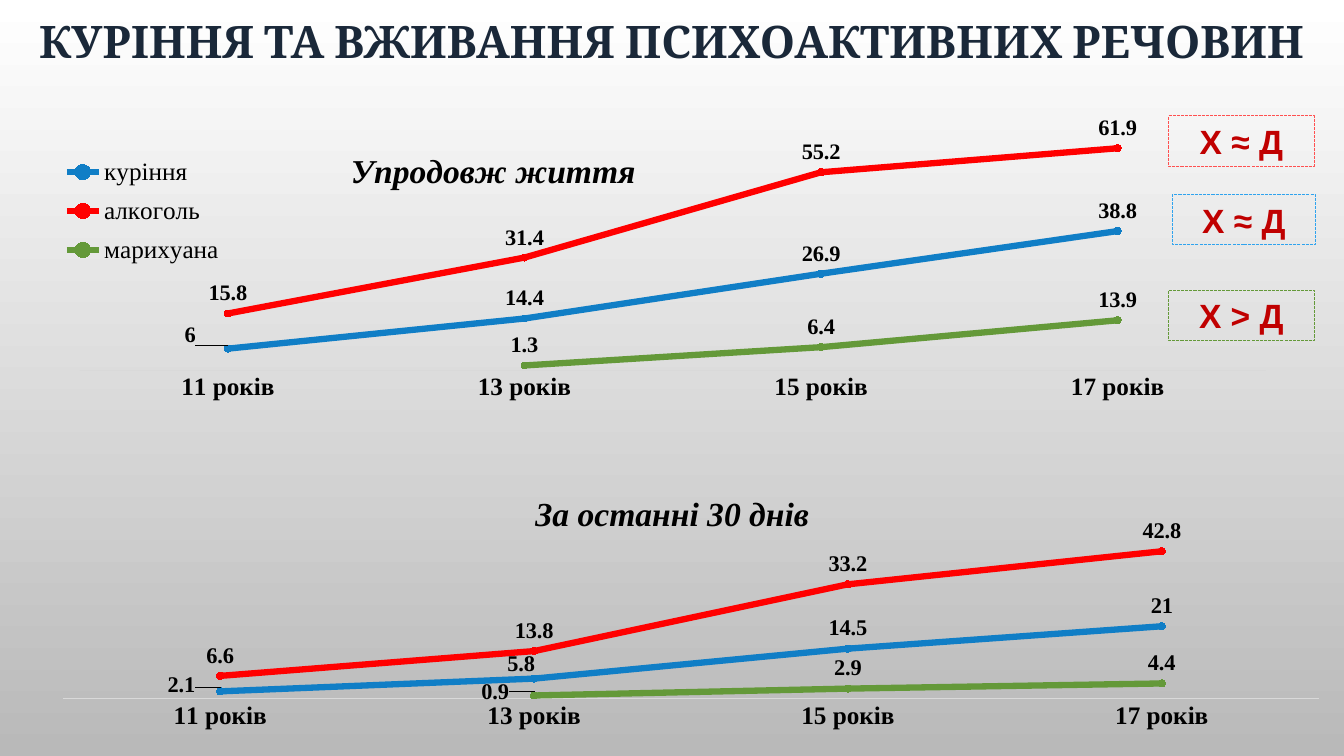
from pptx import Presentation
from pptx.chart.data import CategoryChartData
from pptx.dml.color import RGBColor
from pptx.enum.chart import (XL_CHART_TYPE, XL_LABEL_POSITION, XL_LEGEND_POSITION,
                             XL_MARKER_STYLE, XL_TICK_LABEL_POSITION, XL_TICK_MARK)
from pptx.enum.dml import MSO_LINE
from pptx.enum.shapes import MSO_SHAPE
from pptx.enum.text import MSO_ANCHOR, MSO_AUTO_SIZE, PP_ALIGN
from pptx.oxml import parse_xml
from pptx.oxml.ns import nsdecls
from pptx.util import Pt

AGES = ["11 років", "13 років", "15 років", "17 років"]
HABITS = [("куріння", "107EC6", "2FA3EE"),
          ("алкоголь", "FF0000", "4BCAAD"),
          ("марихуана", "649939", "86C157")]
LIFE = [(6, 14.4, 26.9, 38.8), (15.8, 31.4, 55.2, 61.9), (None, 1.3, 6.4, 13.9)]
MONTH = [(2.1, 5.8, 14.5, 21), (6.6, 13.8, 33.2, 42.8), (None, 0.9, 2.9, 4.4)]
BADGES = [(834.5, 82.8, 104.4, "Х ≈ Д", "FF5050"),
          (837.4, 139, 102.2, "Х ≈ Д", "2FA3EE"),
          (834.5, 207.4, 104.4, "Х > Д", "649939")]


def rgb(code):
    """Turn a hex string into a colour."""
    return RGBColor.from_string(code)


def style(font, face, size, color="000000", bold=False, italic=False):
    """Format a font."""
    font.name, font.size = face, Pt(size)
    font.bold, font.italic = bold, italic
    font.color.rgb = rgb(color)


def place(node, spot, x, y, w=None, h=None, edge=True, inner=False):
    """Give a chart part a manual layout, as shares of the chart."""
    for old in node.xpath("c:layout"):
        node.remove(old)
    tags = [("layoutTarget", "inner")] if inner else []
    tags += [("xMode", "edge"), ("yMode", "edge")] if edge else []
    tags += [("x", x), ("y", y)]
    tags += [("w", w), ("h", h)] if w else []
    body = "".join(f'<c:{tag} val="{val}"/>' for tag, val in tags)
    node.insert(spot, parse_xml(f'<c:layout {nsdecls("c")}><c:manualLayout>{body}'
                                '</c:manualLayout></c:layout>'))


def clear():
    """Make an empty fill for a chart part."""
    return parse_xml(f'<c:spPr {nsdecls("c", "a")}><a:noFill/>'
                     '<a:ln><a:noFill/></a:ln></c:spPr>')


class Deck:
    """Hold the style and the current slide."""

    serif, sans, head = "Times New Roman", "Arial", "Cambria"

    def __init__(self):
        """Open a wide deck with one title slide."""
        self.prs = Presentation()
        self.prs.slide_width, self.prs.slide_height = Pt(960), Pt(540)
        self.slide = self.prs.slides.add_slide(self.prs.slide_layouts[5])

    def shade(self, top, base):
        """Fill the background from top to base."""
        fill = self.slide.background.fill
        fill.gradient()
        fill.gradient_angle = 270
        for stop, code, spot in zip(fill.gradient_stops, (top, base), (0, 1)):
            stop.color.rgb = rgb(code)
            stop.position = spot

    def title(self, text):
        """Place and format the slide title."""
        box = self.slide.shapes.title
        box.left, box.top, box.width, box.height = Pt(0), Pt(9.4), Pt(960), Pt(44)
        frame = box.text_frame
        frame.text = text
        frame.word_wrap = True
        frame.vertical_anchor = MSO_ANCHOR.MIDDLE
        para = frame.paragraphs[0]
        para.alignment, para.line_spacing = PP_ALIGN.CENTER, 0.9
        style(para.runs[0].font, self.head, 32, "1A2839", True)

    def badge(self, x, y, w, text, color):
        """Add a dashed box with a comparison."""
        box = self.slide.shapes.add_shape(MSO_SHAPE.RECTANGLE, Pt(x), Pt(y), Pt(w), Pt(36))
        box.shadow.inherit = False
        box.fill.background()
        box.line.color.rgb = rgb(color)
        box.line.width = Pt(0.75)
        box.line.dash_style = MSO_LINE.SQUARE_DOT
        frame = box.text_frame
        frame.text = text
        frame.word_wrap = True
        frame.auto_size = MSO_AUTO_SIZE.SHAPE_TO_FIT_TEXT
        frame.vertical_anchor = MSO_ANCHOR.TOP
        para = frame.paragraphs[0]
        para.alignment = PP_ALIGN.CENTER
        style(para.runs[0].font, self.sans, 24, "C00000", True)

    def chart(self, box, name, spot, plot, rows, moved):
        """Add a line chart; moved maps (series, point) to a label shift."""
        data = CategoryChartData()
        data.categories = AGES
        for habit, row in zip(HABITS, rows):
            data.add_series(habit[0], row)
        chart = self.slide.shapes.add_chart(
            XL_CHART_TYPE.LINE_MARKERS, *map(Pt, box), data).chart
        style(chart.font, "Calibri", 10)
        chart.element.xpath("c:chart")[0].addnext(clear())
        area = chart.element.xpath("c:chart/c:plotArea")[0]
        area.append(clear())
        place(area, 0, *plot, inner=True)
        frame = chart.chart_title.text_frame
        frame.text = name
        style(frame.paragraphs[0].runs[0].font, self.serif, 24, bold=True, italic=True)
        chart.chart_title.include_in_layout = False
        place(chart.element.xpath("c:chart/c:title")[0], 1, *spot)
        chart.has_legend = False
        self.axes(chart)
        lines = chart.plots[0].series
        chart.plots[0].vary_by_categories = False
        for line, habit in zip(lines, HABITS):
            self.line(line, habit[1], habit[2])
        for (row, point), shift in moved.items():
            self.label(lines[row].points[point].data_label)
            node = area.xpath(f".//c:ser[{row + 1}]//c:dLbl[c:idx/@val={point}]")[0]
            place(node, 1, *shift, edge=False)
        return chart

    def axes(self, chart):
        """Format the ages and hide the values."""
        ages, vals = chart.category_axis, chart.value_axis
        ages.major_tick_mark = ages.minor_tick_mark = XL_TICK_MARK.NONE
        ages.tick_label_position = XL_TICK_LABEL_POSITION.NEXT_TO_AXIS
        ages.format.line.color.rgb = rgb("D9D9D9")
        ages.format.line.width = Pt(0.75)
        style(ages.tick_labels.font, self.serif, 18, bold=True)
        vals.minimum_scale, vals.maximum_scale, vals.major_unit = 0, 70, 30
        vals.has_major_gridlines = vals.visible = False

    def label(self, tag):
        """Put a value label above its point."""
        tag.position = XL_LABEL_POSITION.ABOVE
        style(tag.font, self.serif, 16, bold=True)

    def line(self, line, color, dot):
        """Format a series, its markers and its labels."""
        line.smooth = False
        line.format.line.color.rgb = rgb(color)
        line.format.line.width = Pt(4.5)
        line.marker.style, line.marker.size = XL_MARKER_STYLE.CIRCLE, 5
        line.marker.format.fill.solid()
        line.marker.format.fill.fore_color.rgb = rgb(dot)
        line.marker.format.line.color.rgb = rgb(color)
        line.data_labels.show_value = True
        self.label(line.data_labels)

    def legend(self, chart, *spot):
        """Show the legend at a fixed spot."""
        chart.has_legend = True
        chart.legend.position = XL_LEGEND_POSITION.BOTTOM
        chart.legend.include_in_layout = False
        style(chart.legend.font, self.serif, 18)
        place(chart.element.xpath("c:chart/c:legend")[0], 1, *spot)


def main():
    """Build the slide."""
    deck = Deck()
    deck.shade("FFFFFF", "B9B9B9")
    deck.title("КУРІННЯ ТА ВЖИВАННЯ ПСИХОАКТИВНИХ РЕЧОВИН")
    life = deck.chart((20.9, 82.8, 901.4, 221), "Упродовж життя", (0.25, 0.08),
                      (0.04, 0, 0.94, 0.82), LIFE, {(0, 0): (-0.03, 0.02)})
    deck.legend(life, 0.02, 0.09, 0.14, 0.42)
    deck.chart((36, 326.9, 924.5, 205), "За останні 30 днів", (0.37, 0.1),
               (0.01, 0, 0.97, 0.84), MONTH,
               {(0, 0): (-0.03, 0.05), (0, 1): (-0.01, 0.02), (2, 1): (-0.03, 0.06)})
    for badge in BADGES:
        deck.badge(*badge)
    deck.prs.save("out.pptx")


if __name__ == "__main__":
    main()
